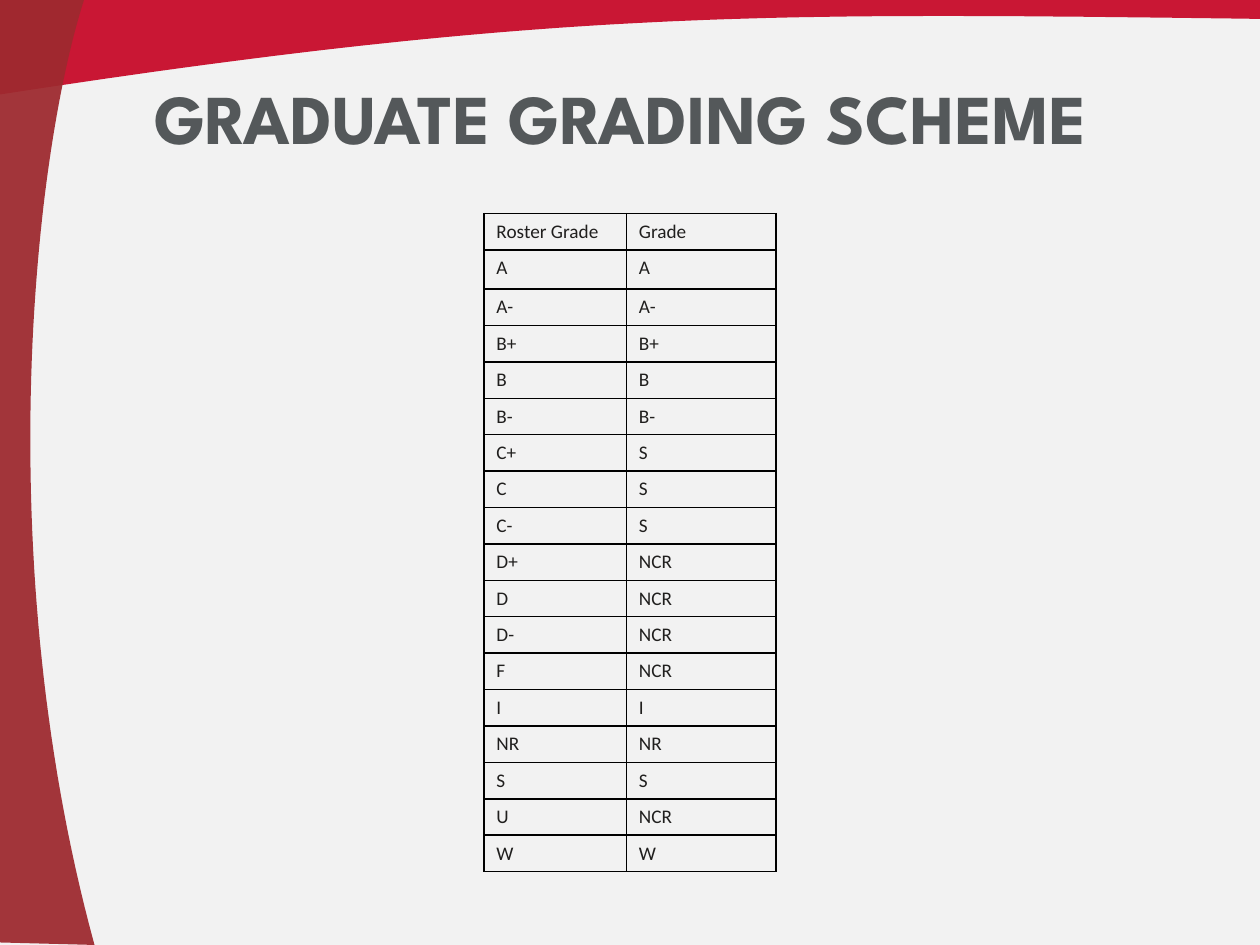
from lxml import etree
from pptx import Presentation
from pptx.dml.color import RGBColor
from pptx.enum import text
from pptx.oxml.ns import qn
from pptx.util import Pt

TITLE = "GRADUATE GRADING SCHEME "
HEADER = ("Roster Grade", "Grade")
GRADES = [
    ("A", "A"), ("A-", "A-"), ("B+", "B+"), ("B", "B"), ("B-", "B-"),
    ("C+", "S"), ("C", "S"), ("C-", "S"),
    ("D+", "NCR"), ("D", "NCR"), ("D-", "NCR"), ("F", "NCR"),
    ("I", "I"), ("NR", "NR"), ("S", "S"), ("U", "NCR"), ("W", "W"),
]

THEME = {
    "background": "F2F2F2", "top": "C8102E", "side": "9E2A2F",
    "title": "54585A", "cell": "201F1E", "border": "000000",
    "title_font": "League Spartan", "cell_font": "Calibri",
    "title_size": 40, "cell_size": 11,
}
WIDTH, HEIGHT = 720, 540
TITLE_BOX = (36, 21.6, 648, 90)
TABLE_LEFT, TABLE_TOP = 276.5, 122.1
COLUMN_WIDTHS = (81.4, 85.7)
ROW_HEIGHT, FIRST_GRADE_HEIGHT = 20, 22.3

# Each band: colour, opacity in percent, straight corners, closing Bezier curve
BANDS = [
    ("top", 97, [(WIDTH, 0), (0, 0)],
     [(0, 54), (317.5, 5), (438.5, 7.2), (WIDTH, 10.8)]),
    ("side", 94, [(0, 538.6), (0, 0)],
     [(48, 0), (18, 94.3), (-5, 324), (54, HEIGHT)]),
]


def color(name):
    return RGBColor.from_string(THEME[name])


def bezier(curve, steps=60):
    """Return evenly spaced parameter points along a cubic curve."""
    points = []
    for step in range(steps + 1):
        t = step / steps
        weights = ((1 - t) ** 3, 3 * t * (1 - t) ** 2, 3 * t * t * (1 - t), t ** 3)
        points.append(tuple(sum(w * p[axis] for w, p in zip(weights, curve))
                            for axis in (0, 1)))
    return points


def add_band(slide, name, opacity, corners, curve):
    outline = [(Pt(x), Pt(y)) for x, y in corners + bezier(curve)]
    builder = slide.shapes.build_freeform(*outline[0])
    builder.add_line_segments(outline[1:], close=True)
    band = builder.convert_to_shape()
    band.shadow.inherit = False
    band.fill.solid()
    band.fill.fore_color.rgb = color(name)
    band.line.fill.background()
    fill = band.element.spPr.find(qn("a:solidFill"))
    etree.SubElement(fill[0], qn("a:alpha"), val=str(opacity * 1000))


def add_text(paragraph, words, kind, bold=False):
    run = paragraph.add_run()
    run.text = words
    run.font.name = THEME[kind + "_font"]
    run.font.size = Pt(THEME[kind + "_size"])
    run.font.bold = bold
    run.font.color.rgb = color(kind)


def set_borders(cell):
    properties = cell._tc.get_or_add_tcPr()
    for position, side in enumerate(("lnL", "lnR", "lnT", "lnB")):
        line = etree.Element(qn("a:" + side), w=str(Pt(1)))
        fill = etree.SubElement(line, qn("a:solidFill"))
        etree.SubElement(fill, qn("a:srgbClr"), val=THEME["border"])
        properties.insert(position, line)


def add_title(slide):
    title = slide.shapes.title
    title.left, title.top, title.width, title.height = map(Pt, TITLE_BOX)
    frame = title.text_frame
    frame.word_wrap = True
    frame.auto_size = text.MSO_AUTO_SIZE.NONE
    frame.vertical_anchor = text.MSO_ANCHOR.MIDDLE
    frame.paragraphs[0].alignment = text.PP_ALIGN.CENTER
    add_text(frame.paragraphs[0], TITLE, "title", bold=True)
    title.element.getparent().append(title.element)  # in front of the bands


def add_grades(slide):
    rows = [HEADER] + GRADES
    heights = [ROW_HEIGHT] * len(rows)
    heights[1] = FIRST_GRADE_HEIGHT
    grades = slide.shapes.add_table(
        len(rows), len(HEADER), Pt(TABLE_LEFT), Pt(TABLE_TOP),
        Pt(sum(COLUMN_WIDTHS)), Pt(sum(heights))).table
    grades.first_row = grades.horz_banding = False
    for column, width in zip(grades.columns, COLUMN_WIDTHS):
        column.width = Pt(width)
    for row, height, values in zip(grades.rows, heights, rows):
        row.height = Pt(height)
        for cell, value in zip(row.cells, values):
            cell.fill.background()
            cell.margin_left = cell.margin_right = Pt(7.2)
            cell.margin_top = cell.margin_bottom = Pt(3.6)
            set_borders(cell)
            add_text(cell.text_frame.paragraphs[0], value, "cell")


def main():
    deck = Presentation()
    deck.slide_width, deck.slide_height = Pt(WIDTH), Pt(HEIGHT)
    slide = deck.slides.add_slide(deck.slide_layouts[5])
    slide.background.fill.solid()
    slide.background.fill.fore_color.rgb = color("background")
    for band in BANDS:
        add_band(slide, *band)
    add_title(slide)
    add_grades(slide)
    deck.save("out.pptx")


if __name__ == "__main__":
    main()
